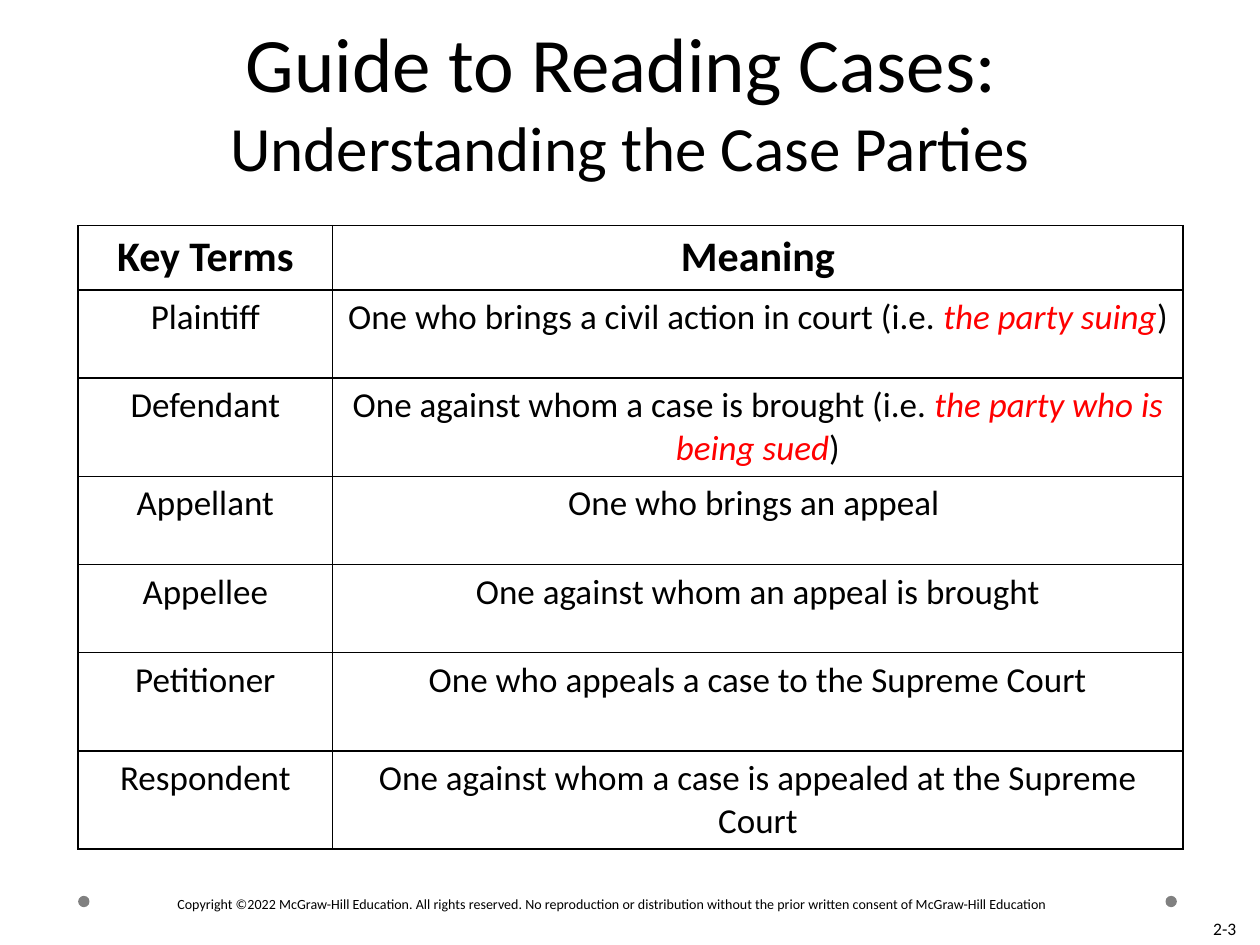
import pptx
import pptx.util
import pptx.dml.color
import pptx.enum.shapes
import pptx.enum.text
import pptx.oxml
import pptx.oxml.ns

Inches, Pt = pptx.util.Inches, pptx.util.Pt
RGB = pptx.dml.color.RGBColor.from_string
ALIGN, ANCHOR = pptx.enum.text.PP_ALIGN, pptx.enum.text.MSO_ANCHOR

THEME = {
    "font": "Calibri", "text": "000000", "accent": "FF0000",
    "dot": "808080", "cell": "FFFFFF", "border": "000000",
    "title": 44, "subtitle": 36, "header": 24, "body": 20,
    "number": 10, "copyright": 8,
}
TITLE = ("Guide to Reading Cases: ", "Understanding the Case Parties")
HEADER = ("Key Terms", ("Meaning",))
TERMS = [
    ("Plaintiff", ("One who brings a civil action in court (i.e. ", "the party suing", ")")),
    ("Defendant", ("One against whom a case is brought (i.e. ", "the party who is being sued", ")")),
    ("Appellant", ("One who brings an appeal ",)),
    ("Appellee", ("One against whom an appeal is brought",)),
    ("Petitioner", ("One who appeals a case to the Supreme Court",)),
    ("Respondent", ("One against whom a case is appealed at the Supreme Court",)),
]
COPYRIGHT = ("Copyright ©2022 McGraw-Hill Education. All rights reserved. "
             "No reproduction or distribution without the prior written consent of McGraw-Hill Education")
NUMBER = "2-3"
COL_WIDTHS = (2.02, 6.75)
ROW_HEIGHTS = (0.51, 0.7, 0.78, 0.7, 0.7, 0.78, 0.78)
DOT_LEFTS = (0.62, 9.25)


def style(r, size, color="text", bold=False, italic=False):
    r.font.name = THEME["font"]
    r.font.size = Pt(THEME[size])
    r.font.color.rgb = RGB(THEME[color])
    r.font.bold, r.font.italic = bold, italic


def add_label(s, text, box, size, align, anchor):
    tf = s.shapes.add_textbox(*map(Inches, box)).text_frame
    tf.word_wrap = True
    tf.vertical_anchor = anchor
    tf.text = text
    tf.paragraphs[0].alignment = align
    style(tf.paragraphs[0].runs[0], size)


def add_borders(cell):
    tc_pr = cell._tc.get_or_add_tcPr()
    for i, side in enumerate("LRTB"):
        tc_pr.insert(i, pptx.oxml.parse_xml(
            f'<a:ln{side} {pptx.oxml.ns.nsdecls("a")} w="{Pt(1)}"><a:solidFill>'
            f'<a:srgbClr val="{THEME["border"]}"/></a:solidFill></a:ln{side}>'))


def fill_cell(cell, parts, size, bold):
    cell.fill.solid()
    cell.fill.fore_color.rgb = RGB(THEME["cell"])
    add_borders(cell)
    p = cell.text_frame.paragraphs[0]
    p.alignment = ALIGN.CENTER
    for i, part in enumerate(parts):
        r = p.add_run()
        r.text = part
        stressed = i == 1
        style(r, size, "accent" if stressed else "text", bold, stressed)


def add_title(s):
    sp = s.shapes.title
    sp.left, sp.top, sp.width, sp.height = map(Inches, (0.5, 0.28, 9, 1.23))
    tf = sp.text_frame
    tf.auto_size = pptx.enum.text.MSO_AUTO_SIZE.NONE
    tf.vertical_anchor = ANCHOR.BOTTOM
    tf.text = "\v".join(TITLE)
    p = tf.paragraphs[0]
    p.alignment = ALIGN.CENTER
    for r, size in zip(p.runs, ("title", "subtitle")):
        style(r, size)


def add_terms(s):
    rows = [HEADER] + TERMS
    table = s.shapes.add_table(
        len(rows), len(COL_WIDTHS), Inches(0.62), Inches(1.79),
        Inches(sum(COL_WIDTHS)), Inches(sum(ROW_HEIGHTS))).table
    table.horz_banding = False
    for col, width in zip(table.columns, COL_WIDTHS):
        col.width = Inches(width)
    for i, (term, meaning) in enumerate(rows):
        table.rows[i].height = Inches(ROW_HEIGHTS[i])
        size = "body" if i else "header"
        fill_cell(table.cell(i, 0), (term,), size, i == 0)
        fill_cell(table.cell(i, 1), meaning, size, i == 0)


def add_footer(s):
    for left in DOT_LEFTS:
        dot = s.shapes.add_shape(pptx.enum.shapes.MSO_SHAPE.OVAL,
                                 *map(Inches, (left, 7.11, 0.09, 0.09)))
        dot.shadow.inherit = False
        dot.fill.solid()
        dot.fill.fore_color.rgb = RGB(THEME["dot"])
        dot.line.fill.background()
    add_label(s, COPYRIGHT, (1.31, 7.06, 7.24, 0.23), "copyright", ALIGN.LEFT, ANCHOR.MIDDLE)
    add_label(s, NUMBER, (7.58, 7, 2.33, 0.5), "number", ALIGN.RIGHT, ANCHOR.BOTTOM)


def main():
    prs = pptx.Presentation()
    prs.slide_width, prs.slide_height = Inches(10), Inches(7.5)
    s = prs.slides.add_slide(prs.slide_layouts[5])
    add_footer(s)
    add_title(s)
    add_terms(s)
    prs.save("out.pptx")


if __name__ == "__main__":
    main()
